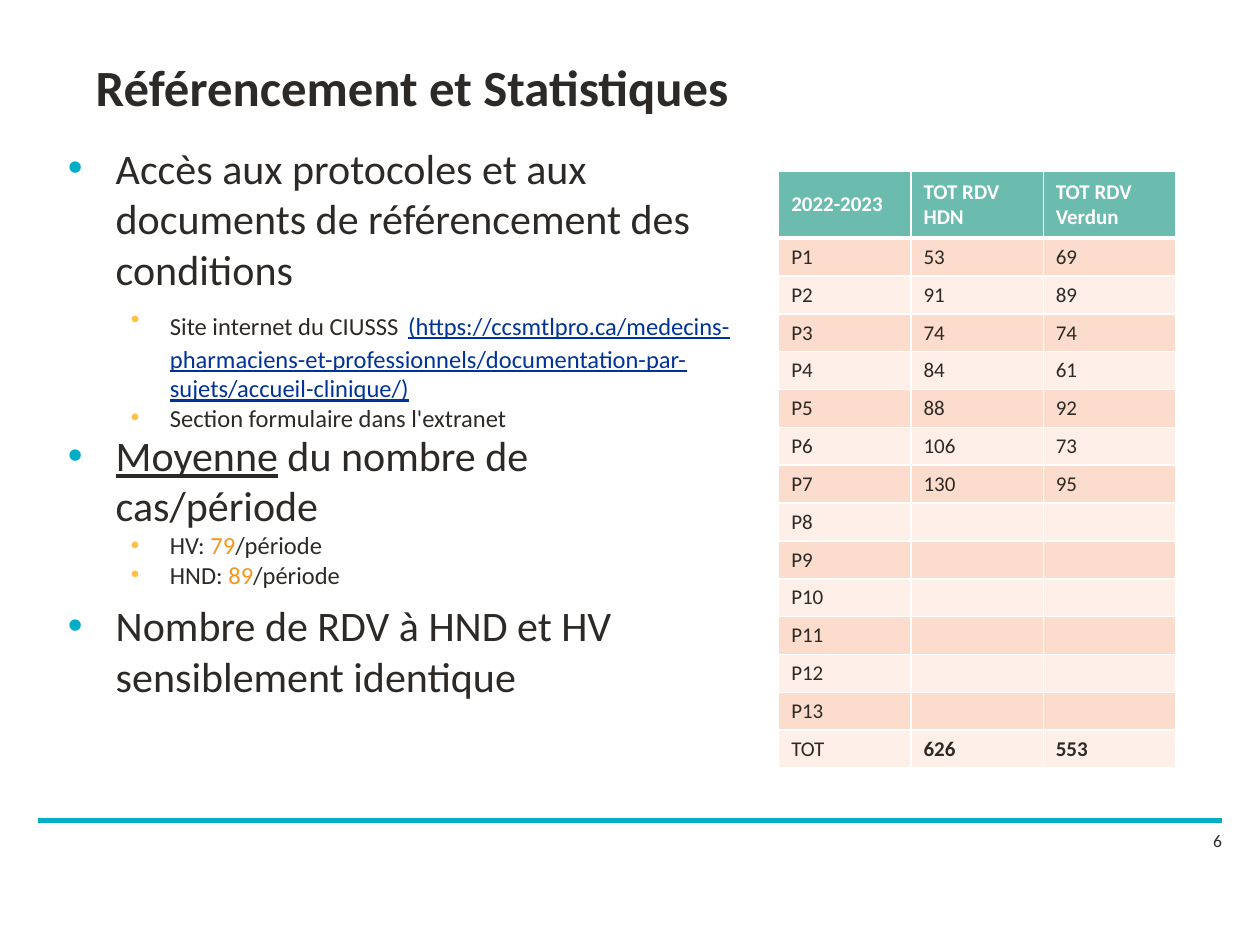
from dataclasses import dataclass

from lxml import etree
from pptx import Presentation
from pptx.dml.color import RGBColor
from pptx.enum.shapes import MSO_CONNECTOR
from pptx.enum.text import MSO_ANCHOR, PP_ALIGN
from pptx.oxml.ns import qn
from pptx.util import Inches, Pt

MIDDLE = MSO_ANCHOR.MIDDLE
LEFT = PP_ALIGN.LEFT
STRAIGHT = MSO_CONNECTOR.STRAIGHT
TITLE_ONLY = 5


@dataclass(frozen=True)
class Theme:
    font: str = "Calibri"
    ink: str = "2D2926"
    white: str = "FFFFFF"
    teal: str = "00AEC7"
    amber: str = "FFBF3F"
    orange: str = "F8951D"
    link: str = "003399"
    header: str = "6BBBAE"
    bands: tuple[str, str] = ("FCDDCD", "FEEFE8")
    title_size: float = 29
    main_size: float = 24
    sub_size: float = 14
    table_size: float = 12
    number_size: float = 10


THEME = Theme()


@dataclass(frozen=True)
class Span:
    text: str
    color: str = THEME.ink
    size: float | None = None
    underline: bool = False


@dataclass(frozen=True)
class Bullet:
    level: int
    spans: tuple[Span, ...]


@dataclass(frozen=True)
class BulletStyle:
    margin: float
    hanging: float
    color: str
    size: float


@dataclass(frozen=True)
class BulletBox:
    top: float
    width: float
    height: float
    bullets: tuple[Bullet, ...]


STYLES = (
    BulletStyle(0.38, 0.38, THEME.teal, THEME.main_size),
    BulletStyle(0.81, 0.31, THEME.amber, THEME.sub_size),
)


def average(site: str, value: str) -> Bullet:
    return Bullet(1, (Span(f"{site}: "), Span(value, THEME.orange), Span("/période")))


BOXES = (
    BulletBox(1.08, 5.51, 2.29, (
        Bullet(0, (Span("Accès aux protocoles et aux documents de référencement des conditions "),)),
        Bullet(1, (
            Span("Site internet du CIUSSS"),
            Span(" ", size=THEME.main_size),
            Span("(https://ccsmtlpro.ca/medecins-pharmaciens-et-professionnels/"
                 "documentation-par-sujets/accueil-clinique/)", THEME.link, underline=True),
        )),
        Bullet(1, (Span("Section formulaire dans l'extranet"),)),
    )),
    BulletBox(3.36, 5.41, 1.72, (
        Bullet(0, (Span("Moyenne", underline=True), Span(" du nombre de cas/période"))),
        average("HV", "79"),
        average("HND", "89"),
    )),
    BulletBox(4.71, 5.41, 1.16, (
        Bullet(0, (Span("Nombre de RDV à HND et HV sensiblement identique"),)),
    )),
)

HEADINGS = ("2022-2023", "TOT RDV HDN ", "TOT RDV Verdun")
HDN = (53, 91, 74, 84, 88, 106, 130)
VERDUN = (69, 89, 74, 61, 92, 73, 95)
PERIODS = 13


def set_font(font, size: float, color: str, bold: bool = False) -> None:
    font.name = THEME.font
    font.size = Pt(size)
    font.bold = bold
    font.color.rgb = RGBColor.from_string(color)


def add_bullet_mark(para, style: BulletStyle) -> None:
    properties = para._p.get_or_add_pPr()
    properties.set("marL", str(Inches(style.margin)))
    properties.set("indent", str(-Inches(style.hanging)))
    color = etree.SubElement(properties, qn("a:buClr"))
    etree.SubElement(color, qn("a:srgbClr"), val=style.color)
    etree.SubElement(properties, qn("a:buFont"), typeface="Arial")
    etree.SubElement(properties, qn("a:buChar"), char="•")


def add_bullet_box(page, content: BulletBox) -> None:
    box = page.shapes.add_textbox(
        Inches(0.44), Inches(content.top), Inches(content.width), Inches(content.height))
    frame = box.text_frame
    frame.word_wrap = True
    for index, bullet in enumerate(content.bullets):
        para = frame.add_paragraph() if index else frame.paragraphs[0]
        style = STYLES[bullet.level]
        para.level = bullet.level
        add_bullet_mark(para, style)
        for span in bullet.spans:
            run = para.add_run()
            run.text = span.text
            set_font(run.font, span.size or style.size, span.color)
            run.font.underline = span.underline


def set_cell_borders(cell, bottom: float) -> None:
    """Draw white borders; these must precede the fill in the cell's XML."""
    properties = cell._tc.get_or_add_tcPr()
    for side, width in (("L", 1), ("R", 1), ("T", 1), ("B", bottom)):
        line = etree.SubElement(properties, qn(f"a:ln{side}"), w=str(Pt(width)))
        fill = etree.SubElement(line, qn("a:solidFill"))
        etree.SubElement(fill, qn("a:srgbClr"), val=THEME.white)


def table_rows() -> list[tuple[str, ...]]:
    rows = [HEADINGS]
    for period in range(PERIODS):
        counts = (str(site[period]) if period < len(site) else "" for site in (HDN, VERDUN))
        rows.append((f"P{period + 1}", *counts))
    rows.append(("TOT", str(sum(HDN)), str(sum(VERDUN))))
    return rows


def add_appointments_table(page) -> None:
    rows = table_rows()
    table = page.shapes.add_table(
        len(rows), len(HEADINGS), Inches(6.18), Inches(1.36), Inches(3.15), Inches(4.73)).table
    for row_index, values in enumerate(rows):
        is_header = row_index == 0
        is_total = row_index == len(rows) - 1
        table.rows[row_index].height = Inches(0.53 if is_header else 0.3)
        for column, value in enumerate(values):
            cell = table.cell(row_index, column)
            set_cell_borders(cell, 3 if is_header else 1)
            cell.fill.solid()
            fill = THEME.header if is_header else THEME.bands[(row_index - 1) % 2]
            cell.fill.fore_color.rgb = RGBColor.from_string(fill)
            cell.vertical_anchor = MIDDLE
            cell.text_frame.text = value
            set_font(cell.text_frame.paragraphs[0].font, THEME.table_size,
                     THEME.white if is_header else THEME.ink,
                     is_header or (is_total and column > 0))


def add_footer(page) -> None:
    rule = page.shapes.add_connector(
        STRAIGHT, Inches(0.3), Inches(6.51), Inches(9.7), Inches(6.51))
    rule.line.color.rgb = RGBColor.from_string(THEME.teal)
    rule.line.width = Pt(3)
    etree.SubElement(rule._element.spPr, qn("a:effectLst"))
    number = page.shapes.add_textbox(Inches(9.53), Inches(6.54), Inches(0.47), Inches(0.4))
    number.text_frame.word_wrap = True
    number.text_frame.text = "6"
    set_font(number.text_frame.paragraphs[0].font, THEME.number_size, THEME.ink)


def set_title(page, text: str) -> None:
    title = page.shapes.title
    title.left, title.top = Inches(0.66), Inches(0.3)
    title.width, title.height = Inches(6.37), Inches(0.77)
    title.text_frame.text = text
    title.text_frame.vertical_anchor = MIDDLE
    para = title.text_frame.paragraphs[0]
    para.alignment = LEFT
    set_font(para.runs[0].font, THEME.title_size, THEME.ink, True)


def main() -> None:
    deck = Presentation()
    deck.slide_width, deck.slide_height = Inches(10), Inches(7.5)
    page = deck.slides.add_slide(deck.slide_layouts[TITLE_ONLY])
    add_footer(page)
    set_title(page, "Référencement et Statistiques")
    add_appointments_table(page)
    for content in BOXES:
        add_bullet_box(page, content)
    deck.save("out.pptx")


if __name__ == "__main__":
    main()
